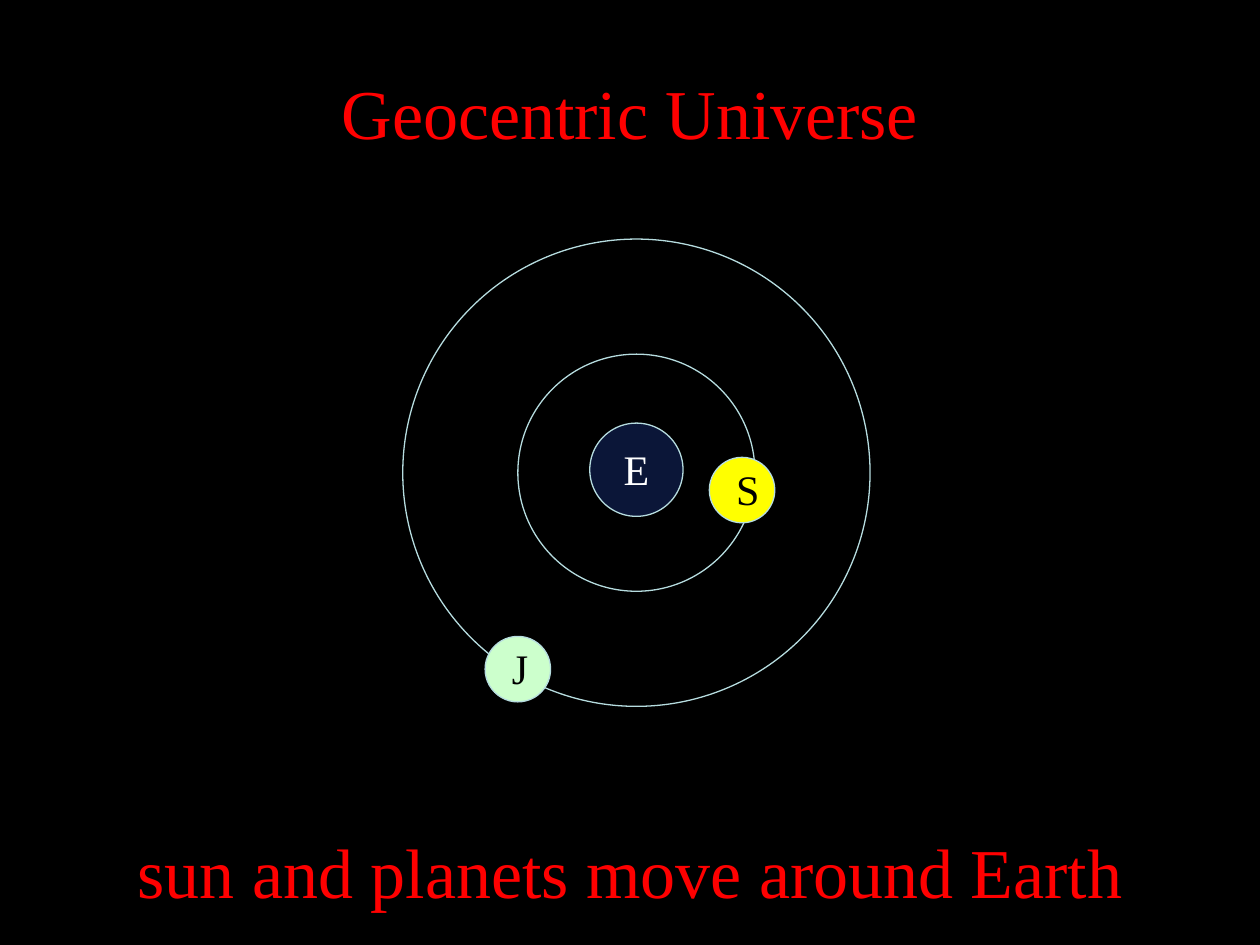
import pptx
import pptx.util
import pptx.dml.color
import pptx.enum.shapes
import pptx.enum.text
import lxml.etree
from dataclasses import dataclass
from pptx.util import Cm, Pt


@dataclass
class Theme:
    font: str = "Times New Roman"
    back: str = "000000"
    title: str = "FF0000"
    light: str = "FFFFFF"
    dark: str = "000000"
    ring: str = "B6DCDF"
    earth: str = "3366FF"
    sun: str = "FFFF00"
    planet: str = "CCFFCC"
    big: int = 40
    small: int = 24
    line: float = 0.75


def color(code):
    return pptx.dml.color.RGBColor.from_string(code)


class Sketch:
    def __init__(self, slide, theme):
        self.slide = slide
        self.theme = theme
        fill = slide.background.fill
        fill.solid()
        fill.fore_color.rgb = color(theme.back)

    def text(self, lines, left, top, width, height, size, tint, align, gap=0):
        box = self.slide.shapes.add_textbox(Cm(left), Cm(top), Cm(width), Cm(height))
        frame = box.text_frame
        frame.word_wrap = True
        frame.text = "\n".join(lines)
        for index, para in enumerate(frame.paragraphs):
            para.alignment = align
            para.font.name = self.theme.font
            para.font.size = Pt(size)
            para.font.color.rgb = color(tint)
            if index:
                para.space_before = Pt(gap)

    def label(self, letter, left, top, tint):
        self.text([letter], left, top, 1.3, 1.27, self.theme.small, tint,
                  pptx.enum.text.PP_ALIGN.LEFT)

    def circle(self, x, y, width, tint=None, alpha=None):
        kind = pptx.enum.shapes.MSO_SHAPE.OVAL
        shape = self.slide.shapes.add_shape(
            kind, Cm(x - width / 2), Cm(y - width / 2), Cm(width), Cm(width))
        shape.shadow.inherit = False
        shape.line.color.rgb = color(self.theme.ring)
        shape.line.width = Pt(self.theme.line)
        if tint is None:
            shape.fill.background()
            return
        shape.fill.solid()
        shape.fill.fore_color.rgb = color(tint)
        if alpha is not None:
            name = pptx.oxml.ns.qn("a:srgbClr")
            node = shape.fill._xPr.find(".//" + name)
            lxml.etree.SubElement(node, pptx.oxml.ns.qn("a:alpha"), val=str(alpha * 1000))


def main():
    deck = pptx.Presentation()
    deck.slide_width, deck.slide_height = Cm(25.4), Cm(19.05)
    theme = Theme()
    sketch = Sketch(deck.slides.add_slide(deck.slide_layouts[6]), theme)

    sketch.text(["Geocentric Universe", "sun and planets move around Earth"],
                0, 1.27, 25.4, 17.35, theme.big, theme.title,
                pptx.enum.text.PP_ALIGN.CENTER, gap=386)

    mid = 12.83
    sketch.circle(mid, 9.47, 1.88, theme.earth, alpha=22)
    sketch.label("E", 12.32, 8.81, theme.light)
    for width in (4.78, 9.42):
        sketch.circle(mid, 9.53, width)

    for letter, x, y, tint in (("S", 14.96, 9.88, theme.sun),
                               ("J", 10.44, 13.49, theme.planet)):
        sketch.circle(x, y, 1.32, tint)
        sketch.label(letter, x - 0.37, y - 0.66, theme.dark)

    deck.save("out.pptx")


if __name__ == "__main__":
    main()
